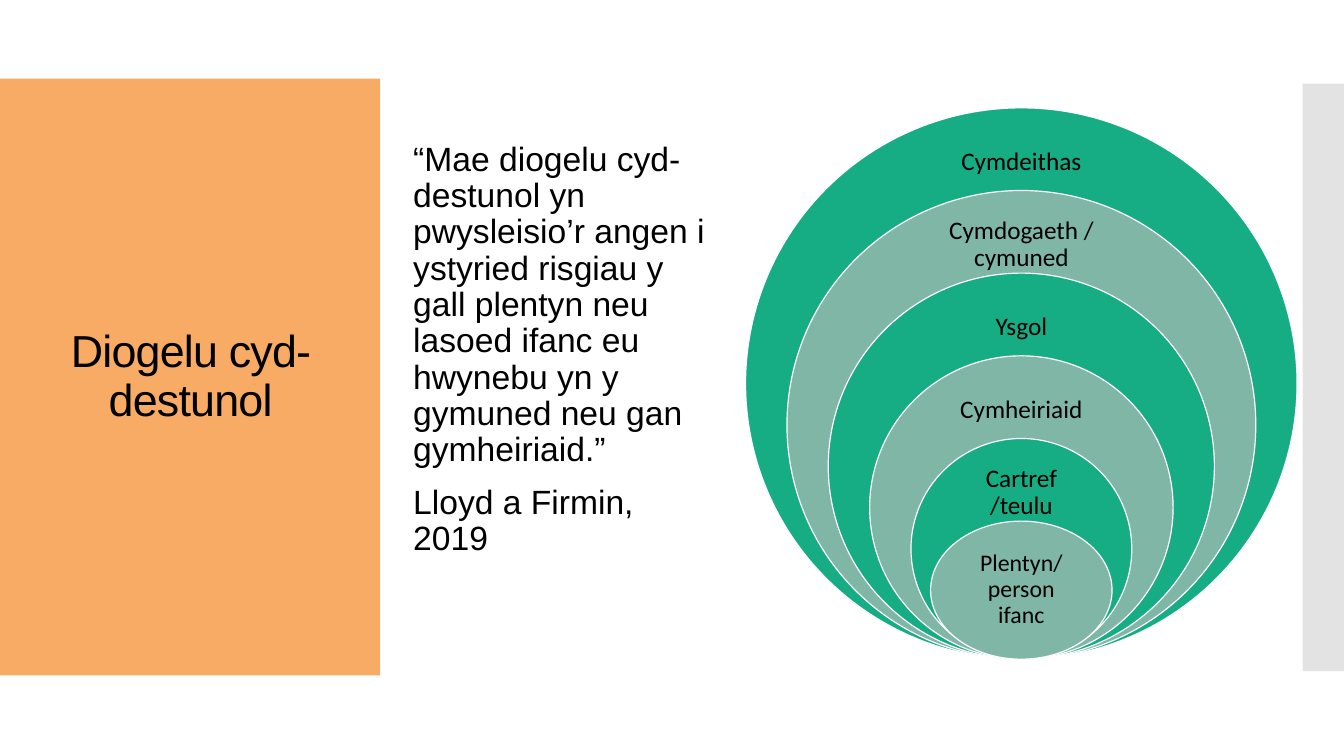
"""Build the slide on contextual safeguarding with nested circles."""
from lxml.etree import SubElement
from pptx import Presentation
from pptx.dml.color import RGBColor
from pptx.enum.shapes import MSO_SHAPE as Shape
from pptx.enum.text import MSO_ANCHOR as Anchor, MSO_AUTO_SIZE as Fit, PP_ALIGN as Align
from pptx.oxml.ns import qn
from pptx.util import Inches, Pt

ORANGE = RGBColor(0xF7, 0xAB, 0x64)
GREY = RGBColor(0xC8, 0xC8, 0xC8)
GREEN = RGBColor(0x16, 0xAD, 0x85)
SAGE = RGBColor(0x7F, 0xB6, 0xA5)
WHITE = RGBColor(0xFF, 0xFF, 0xFF)
BLACK = RGBColor(0, 0, 0)


def draw(kind, left, top, width, height, color):
    shape = slide.shapes.add_shape(
        kind, Inches(left), Inches(top), Inches(width), Inches(height))
    shape.shadow.inherit = False
    shape.fill.solid()
    shape.fill.fore_color.rgb = color
    shape.line.fill.background()
    return shape


def write(frame, text, font, size, align, before=0):
    frame.text = text
    frame.word_wrap = True
    frame.auto_size = Fit.NONE
    frame.vertical_anchor = Anchor.MIDDLE
    for para in frame.paragraphs:
        para.alignment = align
        para.line_spacing = 0.9
        para.space_before = Pt(before)
        for run in para.runs:
            run.font.name = font
            run.font.size = Pt(size)
            run.font.color.rgb = BLACK


prs = Presentation()
prs.slide_width = Inches(13.33)
prs.slide_height = Inches(7.5)
slide = prs.slides.add_slide(prs.slide_layouts[5])

strip = draw(Shape.RECTANGLE, 12.92, 0.83, 0.41, 5.83, GREY)
tint = strip.fill._xPr.find(qn("a:solidFill"))[0]
SubElement(tint, qn("a:alpha")).set("val", "50000")
draw(Shape.RECTANGLE, 0, 0.78, 3.77, 5.92, ORANGE)

title = slide.shapes.title
slide.shapes._spTree.append(title._element)
title.left, title.top = Inches(0.28), Inches(1.23)
title.width, title.height = Inches(3.22), Inches(5.03)
write(title.text_frame, "Diogelu cyd-destunol", "Arial", 32, Align.CENTER)
title.text_frame.paragraphs[0].runs[0].font._element.set("spc", "-60")

quote = slide.shapes.add_textbox(Inches(4), Inches(0.94), Inches(3.12), Inches(5.6))
write(quote.text_frame,
      "“Mae diogelu cyd-destunol yn pwysleisio’r angen i ystyried risgiau y gall "
      "plentyn neu lasoed ifanc eu hwynebu yn y gymuned neu gan gymheiriaid.”\n"
      "Lloyd a Firmin, 2019", "Arial", 24, Align.LEFT, 12)
quote.text_frame.margin_bottom = Inches(0.58)

MID, BASE, STEP = 10.13, 6.54, 0.82
rings = [
    ("Cymdeithas", 5.47, 2.05),
    ("Cymdogaeth / cymuned", 4.65, 2.01),
    ("Ysgol", 3.83, 1.98),
    ("Cymheiriaid", 3.01, 1.63),
    ("Cartref /teulu", 2.19, 1.42),
    ("Plentyn/ person ifanc", 1.8, 1.27),
]
for i, (name, width, span) in enumerate(rings):
    core = i == len(rings) - 1
    tall = 5.47 - STEP * i
    top = BASE - tall
    ring = draw(Shape.OVAL, MID - width / 2, top, width, tall, SAGE if i % 2 else GREEN)
    ring.line.color.rgb = WHITE
    ring.line.width = Pt(0.85)
    drop, high, size, pad = (0.34, 0.68, 17, 0.13) if core else (0.27, 0.54, 18, 0.14)
    label = slide.shapes.add_textbox(
        Inches(MID - span / 2), Inches(top + drop), Inches(span), Inches(high))
    frame = label.text_frame
    write(frame, name, "Calibri", size, Align.CENTER)
    frame.margin_left = frame.margin_right = Inches(pad)
    frame.margin_top = frame.margin_bottom = Inches(pad)

prs.save("out.pptx")
